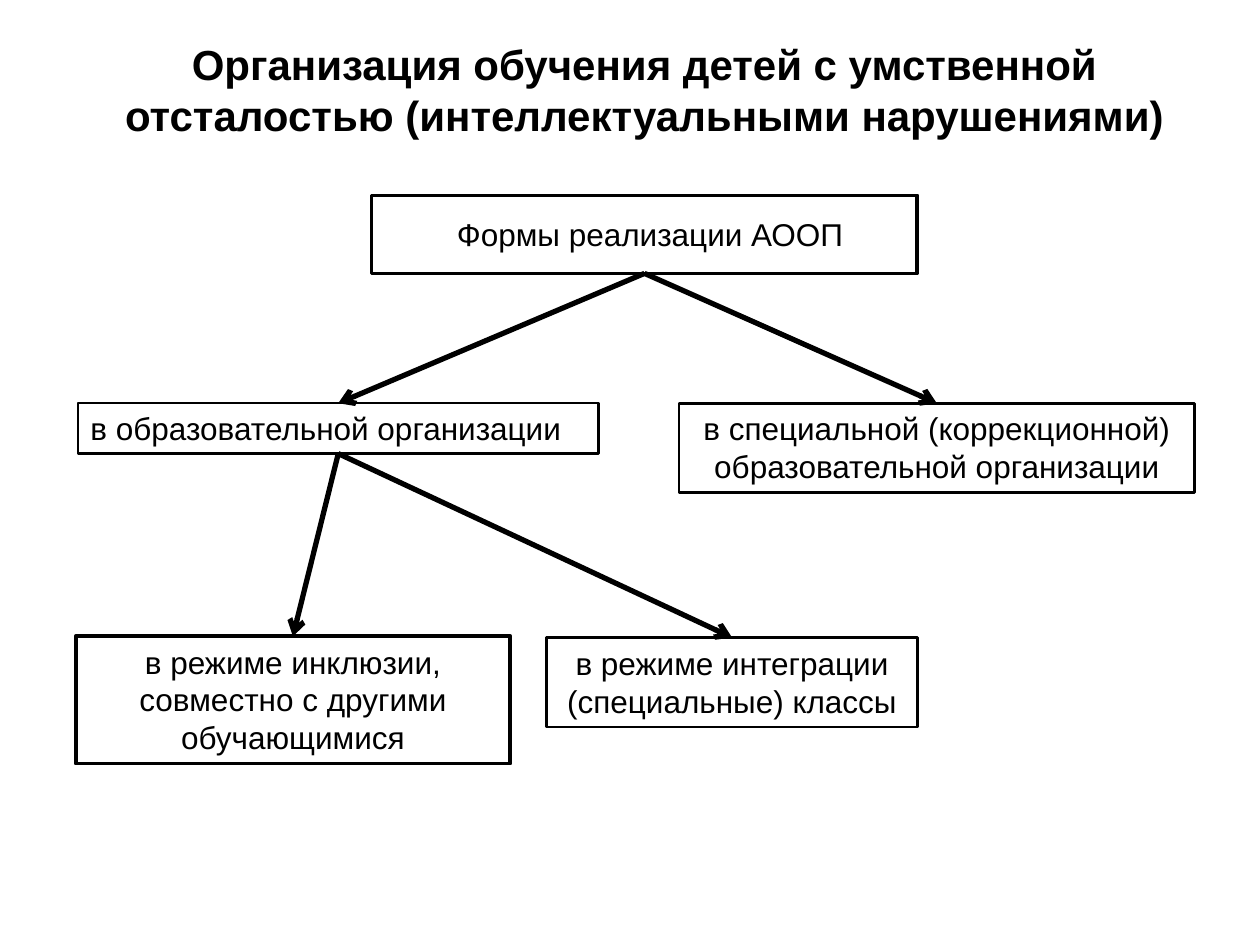
from dataclasses import dataclass

from lxml.etree import SubElement
from pptx import Presentation
from pptx.dml.color import RGBColor
from pptx.enum.shapes import MSO_CONNECTOR as Connector, MSO_SHAPE as Shape
from pptx.enum.text import MSO_ANCHOR as Anchor, PP_ALIGN as Align
from pptx.oxml.ns import qn
from pptx.slide import Slide
from pptx.util import Inches, Pt

BLACK = RGBColor(0x00, 0x00, 0x00)
WHITE = RGBColor(0xFF, 0xFF, 0xFF)
TOP, BOTTOM = 0, 2


@dataclass
class Diagram:
    slide: Slide
    font: str = "Arial"
    title_size: float = 24
    body_size: float = 18
    arrow_width: float = 3
    cell: int = Inches(0.1)

    def place(self, *grid):
        return [round(units * self.cell) for units in grid]

    def add_words(self, frame, words, size, align, bold=False):
        frame.word_wrap = True
        paragraph = frame.paragraphs[0]
        paragraph.alignment = align
        run = paragraph.add_run()
        run.text = words
        run.font.name = self.font
        run.font.size = Pt(size)
        run.font.bold = bold
        run.font.color.rgb = BLACK
        return paragraph

    def title(self, words, grid):
        heading = self.slide.shapes.add_textbox(*self.place(*grid))
        self.add_words(heading.text_frame, words, self.title_size, Align.CENTER, True)

    def box(self, words, grid, border=1.5, align=Align.CENTER, anchor=Anchor.TOP,
            filled=False, indent=0):
        node = self.slide.shapes.add_shape(Shape.RECTANGLE, *self.place(*grid))
        node.shadow.inherit = False
        if filled:
            node.fill.solid()
            node.fill.fore_color.rgb = WHITE
        else:
            node.fill.background()
        node.line.color.rgb = BLACK
        node.line.width = Pt(border)
        node.text_frame.vertical_anchor = anchor
        paragraph = self.add_words(node.text_frame, words, self.body_size, align)
        if indent:
            paragraph._p.get_or_add_pPr().set("indent", str(Inches(indent)))
        return node

    def arrow(self, parent, child):
        link = self.slide.shapes.add_connector(Connector.STRAIGHT, 0, 0, 0, 0)
        link.begin_connect(parent, BOTTOM)
        link.end_connect(child, TOP)
        link.line.color.rgb = BLACK
        link.line.width = Pt(self.arrow_width)
        properties = link._element.spPr
        SubElement(properties.get_or_add_ln(), qn("a:tailEnd"), type="arrow")
        SubElement(properties, qn("a:effectLst"))

    def branch(self, parent, *children):
        for child in children:
            self.arrow(parent, child)


def main():
    deck = Presentation()
    deck.slide_width, deck.slide_height = Inches(10), Inches(7.5)
    diagram = Diagram(deck.slides.add_slide(deck.slide_layouts[6]))

    diagram.title(
        "Организация обучения детей с умственной отсталостью "
        "(интеллектуальными нарушениями)", (4.3, 2.6, 93.7, 9.1))
    forms = diagram.box("Формы реализации АООП", (29.5, 15.5, 43.3, 6.2),
                        border=2, anchor=Anchor.MIDDLE, filled=True, indent=0.09)
    general = diagram.box("в образовательной организации",
                          (6.2, 32, 41.3, 4), align=Align.LEFT)
    special = diagram.box("в специальной (коррекционной) образовательной организации",
                          (53.9, 32, 40.9, 7.1))
    inclusion = diagram.box("в режиме инклюзии, совместно с другими обучающимися",
                            (6, 50.5, 34.5, 10.1), border=2.25)
    integration = diagram.box("в режиме интеграции (специальные) классы",
                              (43.4, 50.6, 29.4, 7.1))

    diagram.branch(forms, general, special)
    diagram.branch(general, inclusion, integration)
    deck.save("out.pptx")


if __name__ == "__main__":
    main()
